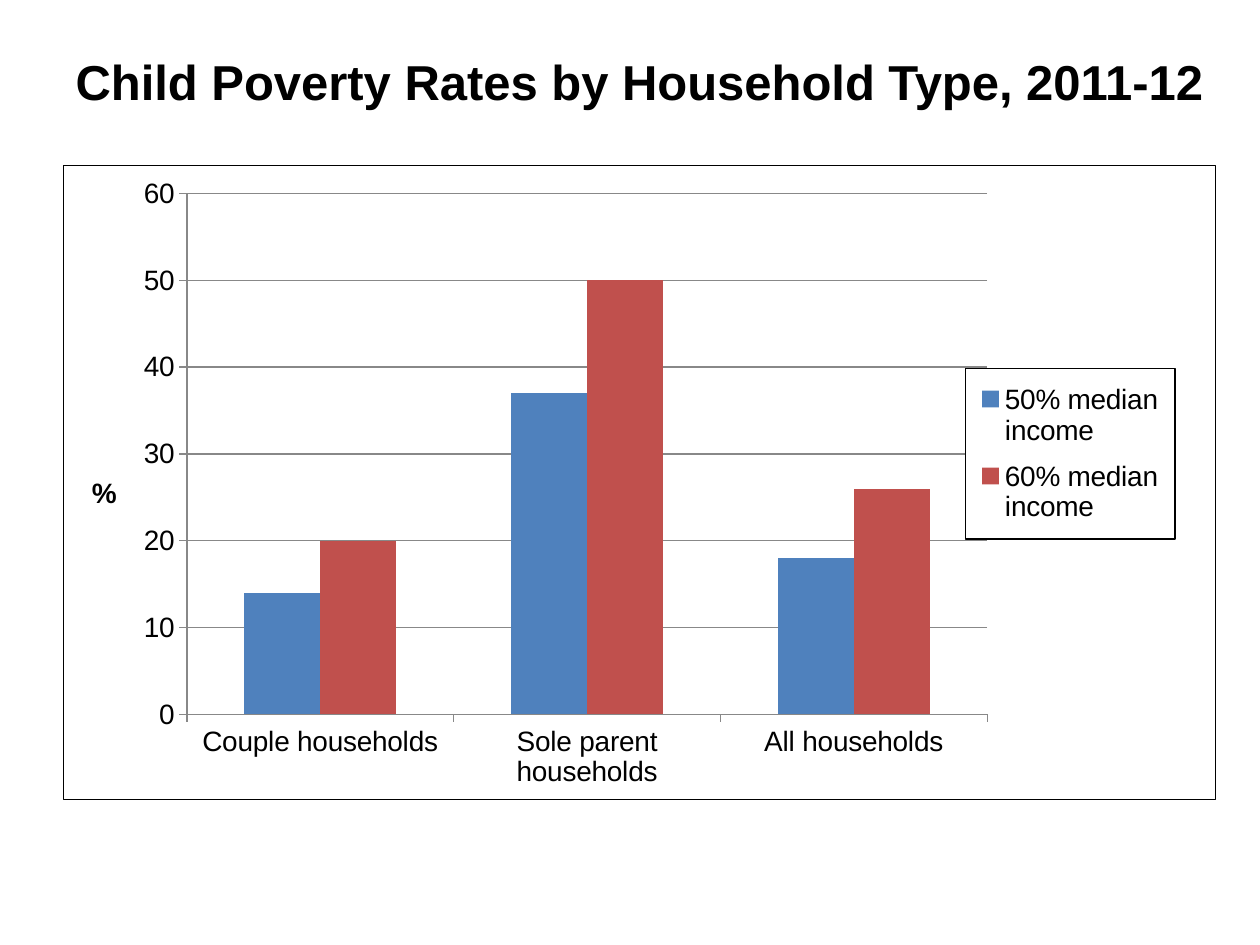
from typing import NamedTuple

from lxml.etree import _Element as Element
from pptx import Presentation
from pptx.chart.data import CategoryChartData
from pptx.dml.color import RGBColor
from pptx.enum.chart import XL_CHART_TYPE as ChartType
from pptx.enum.chart import XL_LEGEND_POSITION as LegendPosition
from pptx.enum.chart import XL_TICK_MARK as TickMark
from pptx.enum.text import MSO_ANCHOR as Anchor
from pptx.enum.text import PP_ALIGN as Align
from pptx.oxml import parse_xml
from pptx.oxml.ns import nsdecls, qn
from pptx.util import Inches, Pt

FONT = "Arial"
BLACK, WHITE, GRAY = "000000", "FFFFFF", "888888"
LINE_WIDTH = 0.75


class Series(NamedTuple):
    name: str
    values: tuple[int, ...]
    color: str


class Area(NamedTuple):
    """A rectangle in shares of the chart's size; no size means automatic."""
    x: float
    y: float
    w: float | None = None
    h: float | None = None


CATEGORIES = ("Couple households", "Sole parent households", "All households")
SERIES = (
    Series("50% median income", (14, 37, 18), "4F81BD"),
    Series("60% median income", (20, 50, 26), "C0504D"),
)
PLOT = Area(0.107, 0.044, 0.695, 0.822)
LEGEND = Area(0.783, 0.32, 0.182, 0.269)
AXIS_TITLE = Area(0.02, 0.48)


def rgb(color: str) -> RGBColor:
    return RGBColor.from_string(color)


def style_font(font, size: float, bold: bool = False) -> None:
    font.name, font.size, font.bold = FONT, Pt(size), bold
    font.color.rgb = rgb(BLACK)


def style_line(line, color: str) -> None:
    line.width = Pt(LINE_WIDTH)
    line.color.rgb = rgb(color)


def place(parent: Element, area: Area, after: str | None = None) -> None:
    """Give a chart part a manual layout, after the named child or first."""
    for old in parent.findall(qn("c:layout")):
        parent.remove(old)
    target = '<c:layoutTarget val="inner"/>' if after is None else ""
    modes = '<c:xMode val="edge"/><c:yMode val="edge"/>'
    sizes = "".join(f'<c:{key} val="{value}"/>'
                    for key, value in area._asdict().items() if value is not None)
    layout = parse_xml(f'<c:layout {nsdecls("c")}><c:manualLayout>'
                       f'{target}{modes}{sizes}</c:manualLayout></c:layout>')
    if after is None:
        parent.insert(0, layout)
    else:
        parent.find(qn(after)).addnext(layout)


def add_border(sibling: Element) -> None:
    """Put a white fill and a black outline after a chart element."""
    sibling.addnext(parse_xml(
        f'<c:spPr {nsdecls("c", "a")}>'
        f'<a:solidFill><a:srgbClr val="{WHITE}"/></a:solidFill>'
        f'<a:ln w="{Pt(LINE_WIDTH)}"><a:solidFill><a:srgbClr val="{BLACK}"/>'
        '</a:solidFill></a:ln></c:spPr>'))


def add_title(slide, text: str) -> None:
    title = slide.shapes.title
    title.left, title.top, title.width, title.height = map(Inches, (0.5, 0.3, 9.3, 0.69))
    frame = title.text_frame
    frame.text = text
    frame.vertical_anchor = Anchor.MIDDLE
    paragraph = frame.paragraphs[0]
    paragraph.alignment = Align.LEFT
    style_font(paragraph.font, 28, bold=True)


def format_axes(chart) -> None:
    for axis in (chart.category_axis, chart.value_axis):
        axis.major_tick_mark = TickMark.OUTSIDE
        axis.minor_tick_mark = TickMark.NONE
        style_line(axis.format.line, GRAY)
    axis = chart.value_axis
    axis.minimum_scale, axis.maximum_scale, axis.major_unit = 0, 60, 10
    axis.tick_labels.number_format = "0"
    axis.tick_labels.number_format_is_linked = False
    axis.has_major_gridlines = True
    style_line(axis.major_gridlines.format.line, GRAY)

    title = axis.axis_title
    frame = title.text_frame
    frame.text = "%"
    style_font(frame.paragraphs[0].font, 16, bold=True)
    body = title.element.find(".//" + qn("a:bodyPr"))
    body.set("rot", "0")
    body.set("vert", "horz")
    place(title.element, AXIS_TITLE, after="c:tx")


def add_poverty_chart(slide) -> None:
    data = CategoryChartData(number_format="0")
    data.categories = CATEGORIES
    for series in SERIES:
        data.add_series(series.name, series.values)
    chart = slide.shapes.add_chart(
        ChartType.COLUMN_CLUSTERED, *map(Inches, (0.5, 1.31, 9.15, 5.04)), data).chart
    chart.has_title = False
    style_font(chart.font, 16)

    plot = chart.plots[0]
    plot.gap_width, plot.overlap, plot.vary_by_categories = 150, 0, False
    for drawn, series in zip(plot.series, SERIES):
        drawn.format.fill.solid()
        drawn.format.fill.fore_color.rgb = rgb(series.color)
    format_axes(chart)

    chart.has_legend = True
    chart.legend.position = LegendPosition.RIGHT
    chart.legend.include_in_layout = False
    chart_part = chart.element.find(qn("c:chart"))
    legend = chart_part.find(qn("c:legend"))
    place(legend, LEGEND, after="c:legendPos")
    place(chart_part.find(qn("c:plotArea")), PLOT)
    add_border(legend.find(qn("c:overlay")))
    add_border(chart_part)


def main() -> None:
    presentation = Presentation()
    presentation.slide_width, presentation.slide_height = Inches(10), Inches(7.5)
    slide = presentation.slides.add_slide(presentation.slide_layouts.get_by_name("Title Only"))
    add_title(slide, "Child Poverty Rates by Household Type, 2011-12")
    add_poverty_chart(slide)
    presentation.save("out.pptx")


if __name__ == "__main__":
    main()
